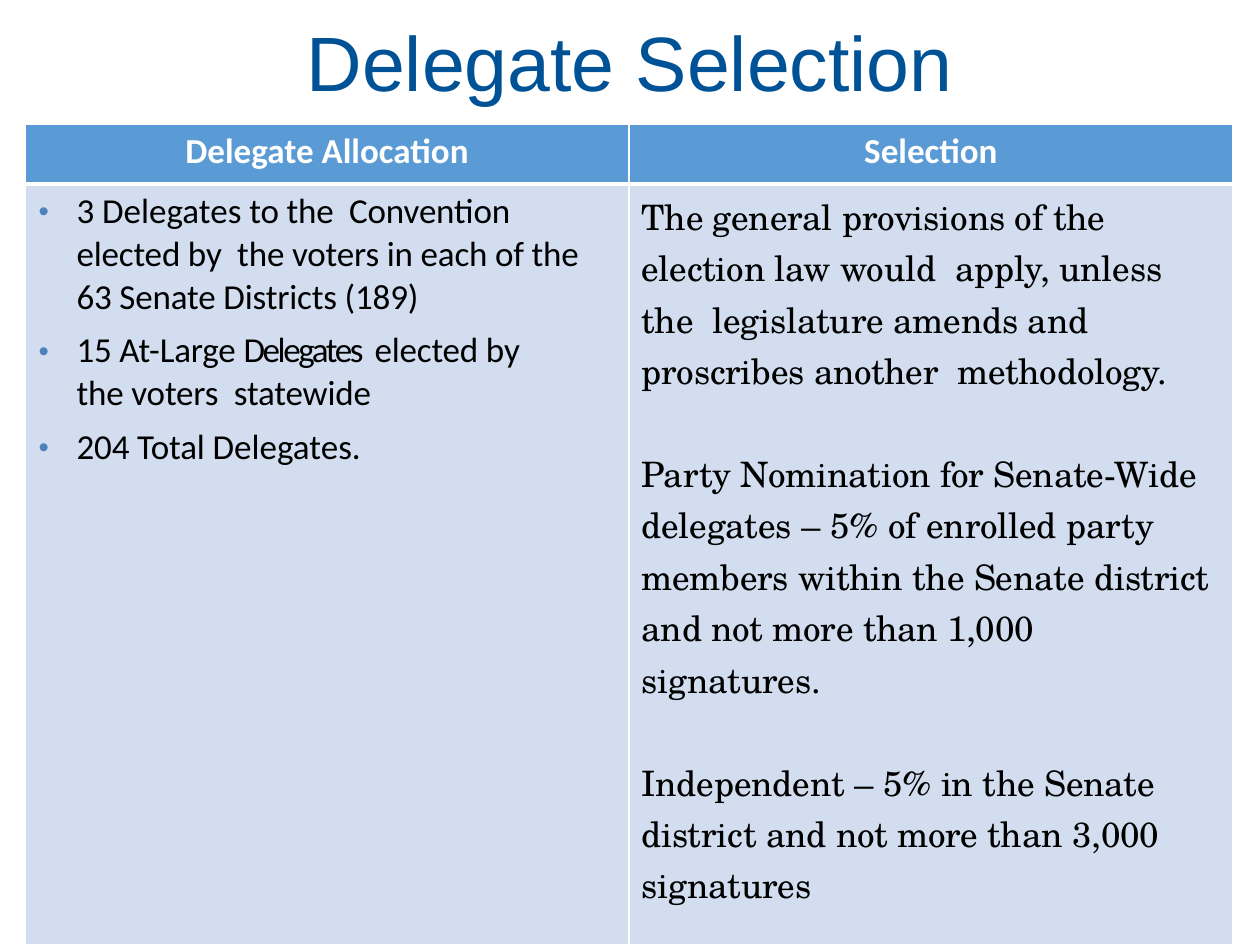
from pptx import Presentation
from pptx.dml.color import RGBColor
from pptx.enum.text import MSO_ANCHOR as Anchor, PP_ALIGN as Align
from pptx.oxml import parse_xml
from pptx.util import Pt

PX = 914400 / 126  # EMU in one px
NS = 'xmlns:a="http://schemas.openxmlformats.org/drawingml/2006/main"'


def px(n):
    return round(n * PX)


def rgb(code):
    return RGBColor.from_string(code)


class Deck:
    navy, blue, pale = "005296", "5B9BD5", "D2DEEF"
    white, black, dot = "FFFFFF", "000000", "4E81BD"
    head, body, serif = "Arial", "Calibri", "TeX Gyre Schola"
    size = 20

    def __init__(self, wide, high):
        self.prs = Presentation()
        self.prs.slide_width, self.prs.slide_height = px(wide), px(high)
        self.slide = self.prs.slides.add_slide(self.prs.slide_layouts[5])

    def style(self, run, face, color, size=size, bold=False, track=0):
        font = run.font
        font.name, font.size, font.bold = face, Pt(size), bold
        font.color.rgb = rgb(color)
        if track:
            run._r.get_or_add_rPr().set("spc", str(track))

    def title(self, text, x, y, w, h):
        box = self.slide.shapes.title
        box.left, box.top, box.width, box.height = map(px, (x, y, w, h))
        frame = box.text_frame
        frame.text = text
        frame.vertical_anchor = Anchor.MIDDLE
        para = frame.paragraphs[0]
        para.alignment, para.line_spacing = Align.CENTER, 0.9
        self.style(para.runs[0], self.head, self.navy, 44)

    def table(self, x, y, cols, rows):
        grid = self.slide.shapes.add_table(
            len(rows), len(cols), px(x), px(y), px(sum(cols)), px(sum(rows))).table
        grid.horz_banding = False
        for col, w in zip(grid.columns, cols):
            col.width = px(w)
        for row, h in zip(grid.rows, rows):
            row.height = px(h)
        return grid

    def cell(self, cell, fill, top=1, low=1):
        cell.fill.solid()
        cell.fill.fore_color.rgb = rgb(fill)
        props = cell._tc.get_or_add_tcPr()
        for i, (side, pts) in enumerate(zip("LRTB", (1, 1, top, low))):
            props.insert(i, parse_xml(
                f'<a:ln{side} {NS} w="{Pt(pts)}"><a:solidFill>'
                f'<a:srgbClr val="{self.white}"/></a:solidFill></a:ln{side}>'))

    def label(self, cell, text):
        self.cell(cell, self.blue, low=3)
        cell.text_frame.text = text
        para = cell.text_frame.paragraphs[0]
        para.alignment = Align.CENTER
        self.style(para.runs[0], self.body, self.white, bold=True)

    def paras(self, cell, count, gap):
        frame = cell.text_frame
        for i in range(count):
            para = frame.add_paragraph() if i else frame.paragraphs[0]
            if i:
                para.space_before = Pt(gap)
            yield para

    def bullets(self, cell, items):
        self.cell(cell, self.pale, top=3)
        for para, (inset, parts) in zip(self.paras(cell, len(items), 6), items):
            props = para._p.get_or_add_pPr()
            for key, n in (("marL", 39), ("marR", inset), ("indent", -38)):
                props.set(key, str(px(n)))
            for tag in (f'<a:buClr {NS}><a:srgbClr val="{self.dot}"/></a:buClr>',
                        f'<a:buSzPct {NS} val="84000"/>',
                        f'<a:buFont {NS} typeface="Arial"/>',
                        f'<a:buChar {NS} char="•"/>',
                        f'<a:tabLst {NS}><a:tab pos="{px(39)}" algn="l"/></a:tabLst>'):
                props.append(parse_xml(tag))
            for text, track in parts:
                run = para.add_run()
                run.text = text
                self.style(run, self.body, self.black, track=track)

    def prose(self, cell, texts):
        self.cell(cell, self.pale, top=3)
        for para, text in zip(self.paras(cell, len(texts), 29.4), texts):
            para.text = text
            self.style(para.runs[0], self.serif, self.black, track=-10)


def main():
    deck = Deck(1260, 945)
    deck.title("Delegate Selection", 87, 0, 1086, 134)

    # Table with a header row and one tall body row
    grid = deck.table(25, 124, [604, 604], [60, 761])
    for i, text in enumerate(["Delegate Allocation", "Selection"]):
        deck.label(grid.cell(0, i), text)

    # Allocation: right inset, then text parts with their letter spacing
    deck.bullets(grid.cell(1, 0), [
        (0, [("3 ", -10), ("Delegates ", 0),
             ("to the  Convention elected by  the voters in each of the  "
              "63 Senate Districts (189)", -10)]),
        (63, [("15 At-Large ", -10), ("Delegates  ", -140),
              ("elected by the voters  statewide", -10)]),
        (0, [("204 Total ", -10), ("Delegates.", 0)]),
    ])

    # Selection rules
    deck.prose(grid.cell(1, 1), [
        "The general provisions of the election law would  apply, unless the  "
        "legislature amends and  proscribes another  methodology.",
        "Party Nomination for Senate-Wide delegates – 5% of enrolled party members "
        "within the Senate district and not more than 1,000 signatures.",
        "Independent – 5% in the Senate district and not more than 3,000 signatures",
    ])
    deck.prs.save("out.pptx")


if __name__ == "__main__":
    main()
